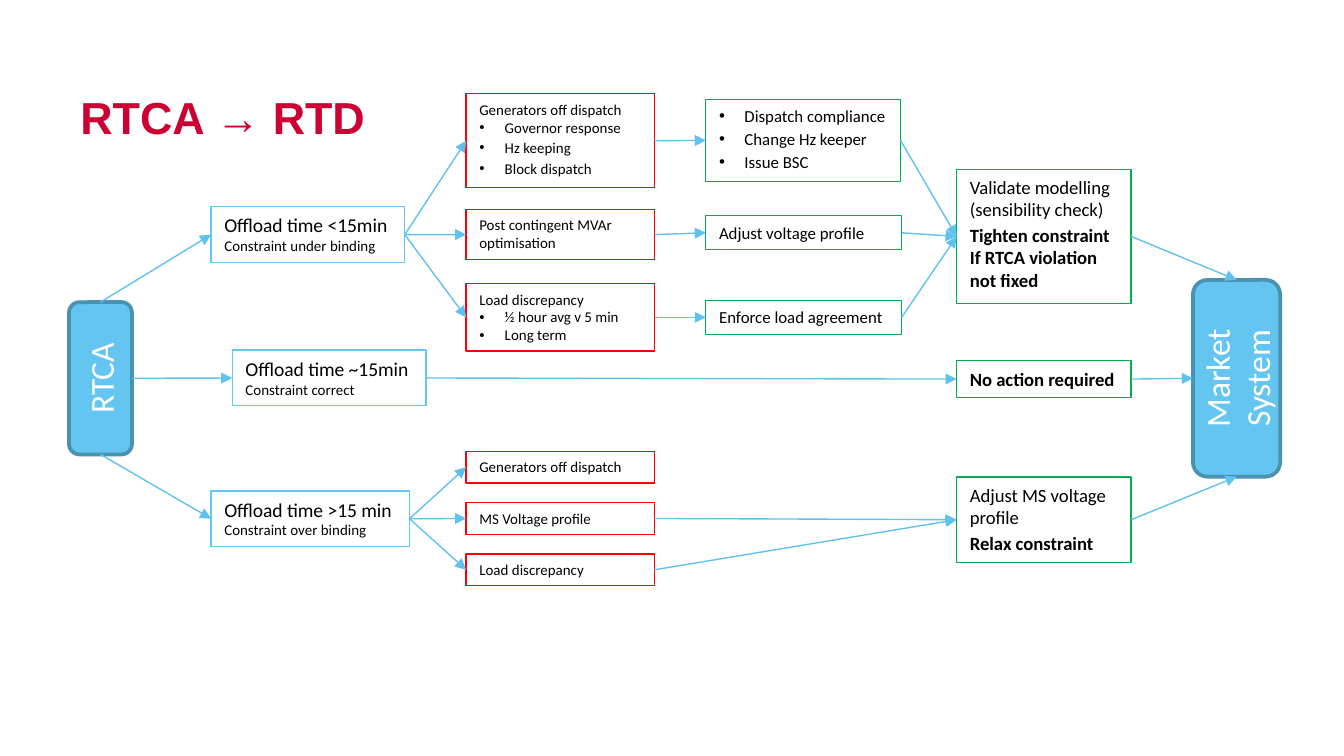
from dataclasses import dataclass

import pptx
import pptx.dml.color
import pptx.enum.shapes
import pptx.enum.text
import pptx.oxml.ns
import pptx.util
from lxml import etree

Cm, Pt = pptx.util.Cm, pptx.util.Pt
Kind = pptx.enum.shapes.MSO_SHAPE
Anchor = pptx.enum.text.MSO_ANCHOR
Align = pptx.enum.text.PP_ALIGN
Fit = pptx.enum.text.MSO_AUTO_SIZE

BLUE, EDGE, ARROW = "63C5F0", "4992B2", "5DC2EE"
RED, GREEN = "FF0000", "00B050"
BLACK, WHITE, TITLE = "000000", "FFFFFF", "CD0034"
TIMES, CAUSES, FIXES, CHECKS = 3.99, 8.81, 13.34, 18.08  # column lefts, cm
SITES = {"top": 0, "left": 1, "bottom": 2, "right": 3}
TURNED = {"left": 0, "bottom": 1, "right": 2, "top": 3}  # after a 270° turn


@dataclass
class Line:
    text: str
    size: float
    bold: bool = False
    bullet: bool = False
    after: float = 0


@dataclass
class Box:
    x: float
    y: float
    w: float
    h: float
    edge: str
    lines: list[Line]
    wrap: bool = True


@dataclass
class Pill:
    """Upright bar, given by its centre; its text reads upwards."""
    cx: float
    cy: float
    long: float
    thick: float
    text: str


@dataclass
class Node:
    shape: object
    x: float
    y: float
    w: float
    h: float
    sites: dict[str, int]

    def spot(self, side: str) -> tuple[int, int]:
        dx, dy = {"top": (0.5, 0), "left": (0, 0.5),
                  "bottom": (0.5, 1), "right": (1, 0.5)}[side]
        return Cm(self.x + dx * self.w), Cm(self.y + dy * self.h)


def rgb(code: str) -> pptx.dml.color.RGBColor:
    return pptx.dml.color.RGBColor.from_string(code)


def style(para, size: float, color: str, bold: bool = False,
          face: str = "Calibri") -> None:
    for run in para.runs:
        font = run.font
        font.name, font.size, font.bold = face, Pt(size), bold
        font.color.rgb = rgb(color)


def add_bullet(para) -> None:
    props = para._p.get_or_add_pPr()
    props.set("marL", str(Cm(0.48)))
    props.set("indent", str(-Cm(0.48)))
    for tag, key, value in (("a:buFont", "typeface", "Arial"),
                            ("a:buChar", "char", "•")):
        etree.SubElement(props, pptx.oxml.ns.qn(tag)).set(key, value)


def draw_box(slide, box: Box) -> Node:
    shape = slide.shapes.add_shape(
        Kind.RECTANGLE, Cm(box.x), Cm(box.y), Cm(box.w), Cm(box.h))
    shape.shadow.inherit = False
    shape.fill.background()
    shape.line.color.rgb = rgb(box.edge)
    shape.line.width = Pt(0.75)
    frame = shape.text_frame
    frame.text = "\n".join(line.text for line in box.lines)
    frame.word_wrap = box.wrap
    frame.auto_size = Fit.SHAPE_TO_FIT_TEXT
    frame.vertical_anchor = Anchor.TOP
    for para, line in zip(frame.paragraphs, box.lines):
        if line.bullet:
            add_bullet(para)
        para.alignment = Align.LEFT
        para.space_after = Pt(line.after)
        style(para, line.size, BLACK, line.bold)
    return Node(shape, box.x, box.y, box.w, box.h, SITES)


def draw_pill(slide, pill: Pill) -> Node:
    shape = slide.shapes.add_shape(
        Kind.ROUNDED_RECTANGLE,
        Cm(pill.cx - pill.long / 2), Cm(pill.cy - pill.thick / 2),
        Cm(pill.long), Cm(pill.thick))
    shape.rotation = 270
    shape.shadow.inherit = False
    shape.fill.solid()
    shape.fill.fore_color.rgb = rgb(BLUE)
    shape.line.color.rgb = rgb(EDGE)
    shape.line.width = Pt(2)
    frame = shape.text_frame
    frame.text = pill.text
    frame.word_wrap = True
    frame.vertical_anchor = Anchor.MIDDLE
    frame.paragraphs[0].alignment = Align.CENTER
    style(frame.paragraphs[0], 18, WHITE)
    return Node(shape, pill.cx - pill.thick / 2, pill.cy - pill.long / 2,
                pill.thick, pill.long, TURNED)


def join(slide, start: Node, end: Node, out: str = "right",
         into: str = "left") -> None:
    """Glue an arrow to both nodes, also where a node is turned."""
    tip, tail = end.spot(into), start.spot(out)
    wire = slide.shapes.add_connector(
        pptx.enum.shapes.MSO_CONNECTOR.STRAIGHT, *tail, *tip)
    wire.begin_connect(start.shape, start.sites[out])
    wire.end_connect(end.shape, end.sites[into])
    wire.begin_x, wire.begin_y = tail
    wire.end_x, wire.end_y = tip
    wire.line.color.rgb = rgb(ARROW)
    wire.line.width = Pt(0.75)
    head = etree.SubElement(wire.line._get_or_add_ln(),
                            pptx.oxml.ns.qn("a:tailEnd"))
    head.set("type", "triangle")
    etree.SubElement(wire._element.spPr, pptx.oxml.ns.qn("a:effectLst"))


def draw_title(slide) -> None:
    frame = slide.shapes.add_textbox(
        Cm(1.27), Cm(0.86), Cm(22.86), Cm(2.29)).text_frame
    frame.text = "RTCA → RTD"
    frame.word_wrap = True
    frame.vertical_anchor = Anchor.MIDDLE
    frame.paragraphs[0].line_spacing = Pt(40)
    style(frame.paragraphs[0], 24, TITLE, True, "Arial")


def time_box(x: float, y: float, w: float, head: str, note: str) -> Box:
    return Box(x, y, w, 1.05, BLUE, [Line(head, 10.5), Line(note, 8)], False)


def cause(y: float, h: float, head: str, *points: str, after: float = 0) -> Box:
    return Box(CAUSES, y, 3.56, h, RED, [Line(head, 8)] + [
        Line(text, 8, bullet=True, after=after) for text in points])


def fix(y: float, text: str) -> Box:
    return Box(FIXES, y, 3.7, 0.64, GREEN, [Line(text, 9)])


def check(y: float, h: float, *lines: Line) -> Box:
    return Box(CHECKS, y, 3.3, h, GREEN, list(lines))


def main() -> None:
    deck = pptx.Presentation()
    deck.slide_width, deck.slide_height = Cm(25.4), Cm(14.29)
    slide = deck.slides.add_slide(deck.slide_layouts[6])
    draw_title(slide)

    rtca = draw_pill(slide, Pill(1.9, 7.15, 2.88, 1.19, "RTCA"))
    market = draw_pill(slide, Pill(23.37, 7.15, 3.72, 1.65, "Market System"))
    under, right, over = [draw_box(slide, box) for box in (
        time_box(TIMES, 3.91, 3.66, "Offload time <15min", "Constraint under binding"),
        time_box(4.39, 6.62, 3.66, "Offload time ~15min", "Constraint correct"),
        time_box(TIMES, 9.28, 3.75, "Offload time >15 min", "Constraint over binding"))]
    early = [draw_box(slide, box) for box in (
        cause(1.77, 1.78, "Generators off dispatch", "Governor response",
              "Hz keeping", "Block dispatch", after=1.5),
        cause(3.96, 0.95, "Post contingent MVAr optimisation"),
        cause(5.36, 1.28, "Load discrepancy", "½ hour avg v 5 min", "Long term"))]
    late = [draw_box(slide, cause(8.53 + 0.97 * row, 0.6, text)) for row, text in
            enumerate(("Generators off dispatch", "MS Voltage profile", "Load discrepancy"))]
    duties = [Line(text, 9, bullet=True, after=1.5) for text in
              ("Dispatch compliance", "Change Hz keeper", "Issue BSC")]
    fixes = [draw_box(slide, box) for box in (
        Box(FIXES, 1.88, 3.68, 1.55, GREEN, duties, False),
        fix(4.08, "Adjust voltage profile"), fix(5.68, "Enforce load agreement"))]
    tighten, none, relax = [draw_box(slide, box) for box in (
        check(3.2, 2.54, Line("Validate modelling (sensibility check)", 10, after=1.5),
              Line("Tighten constraint If RTCA violation not fixed", 10, True, after=1.5)),
        check(6.82, 0.69, Line("No action required", 10, True)),
        check(9.02, 1.61, Line("Adjust MS voltage profile", 10, after=1.5),
              Line("Relax constraint", 10, True, after=1.5)))]

    join(slide, rtca, under, out="top")
    join(slide, rtca, over, out="bottom")
    for first, last in zip(early, fixes):
        join(slide, under, first)
        join(slide, first, last)
        join(slide, last, tighten)
    for node in late:
        join(slide, over, node)
    for start, end in ((rtca, right), (right, none), (none, market),
                       (late[1], relax), (late[2], relax)):
        join(slide, start, end)
    join(slide, tighten, market, into="top")
    join(slide, relax, market, into="bottom")
    deck.save("out.pptx")


if __name__ == "__main__":
    main()
